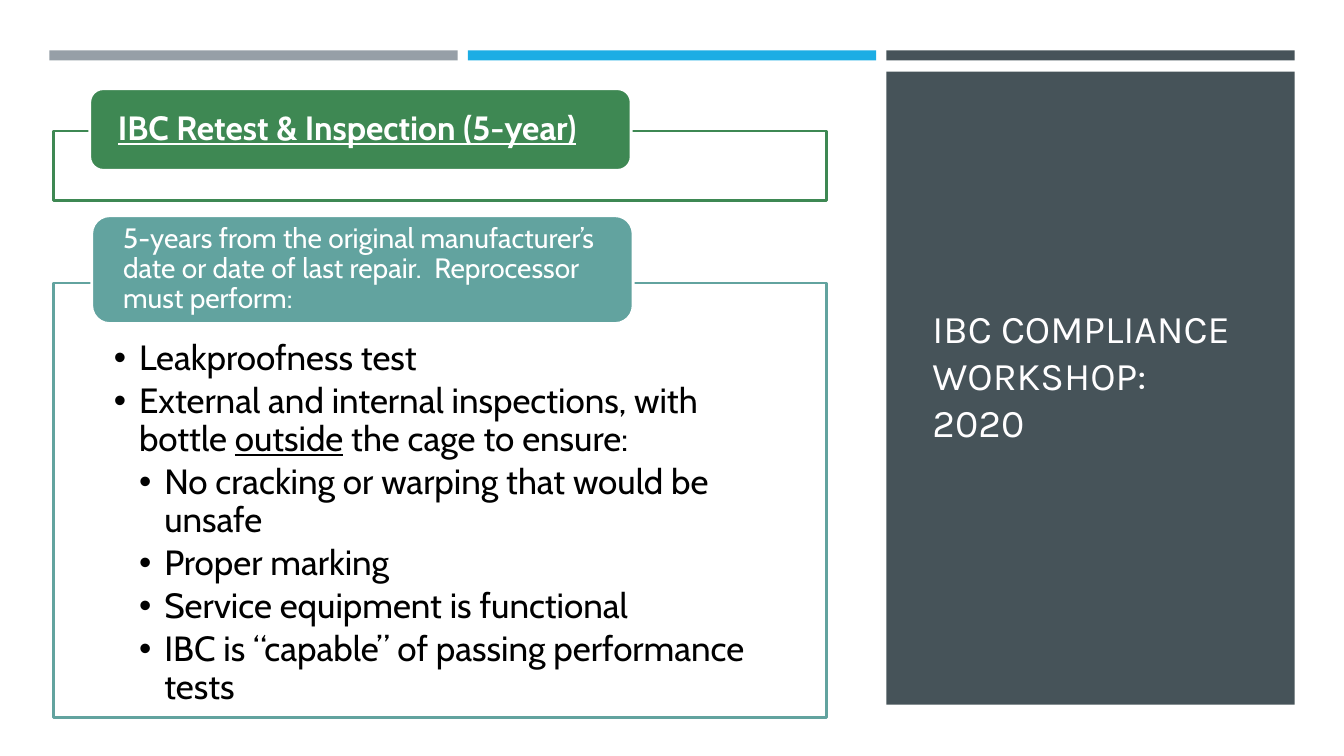
from dataclasses import dataclass

from lxml.etree import SubElement
from pptx import Presentation
from pptx.dml.color import RGBColor
from pptx.enum.shapes import MSO_SHAPE
from pptx.enum.text import MSO_ANCHOR, PP_ALIGN
from pptx.oxml.ns import qn
from pptx.util import Pt

PX = 9144  # 100 px to the inch


@dataclass(frozen=True)
class Theme:
    white: str = "FFFFFF"
    title_text: str = "FFFEFF"
    black: str = "000000"
    slate: str = "465359"
    grey: str = "969FA7"
    blue: str = "1CADE4"
    green: str = "3E8853"
    teal: str = "62A39F"
    title_font: str = "Karla"
    body_font: str = "Cabin"
    title_size: int = 28
    heading_size: int = 24
    body_size: int = 25
    note_size: int = 20
    frame_line: float = 1.75
    label_line: float = 2
    tight: float = 0.9


class SlideBuilder:
    def __init__(self, slide, theme):
        self.s = slide
        self.t = theme

    def shape(self, box, fill, line=None, width=0, kind=MSO_SHAPE.RECTANGLE):
        sp = self.s.shapes.add_shape(kind, *(v * PX for v in box))
        sp.shadow.inherit = False
        sp.fill.solid()
        sp.fill.fore_color.rgb = RGBColor.from_string(fill)
        if line:
            sp.line.color.rgb = RGBColor.from_string(line)
            sp.line.width = Pt(width)
        else:
            sp.line.fill.background()
        return sp

    def frame(self, box, color):
        return self.shape(box, self.t.white, color, self.t.frame_line)

    def label(self, box, color, inset, text, size, **style):
        """Rounded heading that sits over the top edge of a frame."""
        sp = self.shape(box, color, self.t.white, self.t.label_line,
                        MSO_SHAPE.ROUNDED_RECTANGLE)
        tf = self.text_frame(sp, (inset, 0, inset, 0), MSO_ANCHOR.MIDDLE)
        p = self.paragraph(tf, self.t.tight)
        self.run(p, text, self.t.body_font, size, self.t.white, **style)

    def title(self, box, text):
        sp = self.s.shapes.add_textbox(*(v * PX for v in box))
        tf = self.text_frame(sp, (10, 5, 10, 5), MSO_ANCHOR.MIDDLE)
        self.run(self.paragraph(tf), text, self.t.title_font,
                 self.t.title_size, self.t.title_text)

    def bullets(self, sp, insets, items):
        """Fill a shape with (level, runs) items; each run is (text, underline)."""
        tf = self.text_frame(sp, insets, MSO_ANCHOR.TOP)
        for level, runs in items:
            p = self.paragraph(tf, self.t.tight)
            p.level = level
            p.space_after = Pt(3.75)
            pPr = p._p.get_or_add_pPr()
            pPr.set("marL", str(25 * level * PX))
            pPr.set("indent", str(-25 * PX))
            SubElement(pPr, qn("a:buFont"), typeface="Arial")
            SubElement(pPr, qn("a:buChar"), char="•")
            for text, underline in runs:
                self.run(p, text, self.t.body_font, self.t.body_size,
                         self.t.black, underline=underline)

    def text_frame(self, sp, insets, anchor):
        tf = sp.text_frame
        tf.word_wrap = True
        tf.vertical_anchor = anchor
        (tf.margin_left, tf.margin_top,
         tf.margin_right, tf.margin_bottom) = (v * PX for v in insets)
        return tf

    def paragraph(self, tf, spacing=1.0):
        """Return the first paragraph while it is empty, then new ones."""
        p = tf.paragraphs[0]
        if p.runs:
            p = tf.add_paragraph()
        p.alignment = PP_ALIGN.LEFT
        p.line_spacing = spacing
        return p

    def run(self, p, text, font, size, color, bold=False, underline=False):
        r = p.add_run()
        r.text = text
        r.font.name = font
        r.font.size = Pt(size)
        r.font.bold = bold
        r.font.underline = underline
        r.font.color.rgb = RGBColor.from_string(color)


INSPECTIONS = [
    (1, [("Leakproofness test", False)]),
    (1, [("External and internal inspections, with bottle ", False),
         ("outside", True),
         (" the cage to ensure:", False)]),
    (2, [("No cracking or warping that would be unsafe", False)]),
    (2, [("Proper marking", False)]),
    (2, [("Service equipment is functional", False)]),
    (2, [("IBC is “capable” of passing performance tests", False)]),
]


def main():
    prs = Presentation()
    prs.slide_width, prs.slide_height = 1333 * PX, 750 * PX
    t = Theme()
    s = SlideBuilder(prs.slides.add_slide(prs.slide_layouts[6]), t)

    s.shape((879, 71, 405, 628), t.slate)
    s.title((915, 114, 329, 515), "IBC COMPLIANCE WORKSHOP: 2020")
    for i, color in enumerate((t.grey, t.blue, t.slate)):
        s.shape((49 + 415 * i, 50, 405, 10), color)

    s.frame((53, 130, 767, 69), t.green)
    s.label((89, 88, 537, 81), t.green, 24, "IBC Retest & Inspection (5-year)",
            t.heading_size, bold=True, underline=True)

    checklist = s.frame((53, 281, 767, 431), t.teal)
    s.bullets(checklist, (60, 57, 60, 19), INSPECTIONS)
    s.label((91, 214, 537, 107), t.teal, 26,
            "5-years from the original manufacturer’s date or date of last "
            "repair.  Reprocessor must perform:", t.note_size)

    prs.save("out.pptx")


if __name__ == "__main__":
    main()
